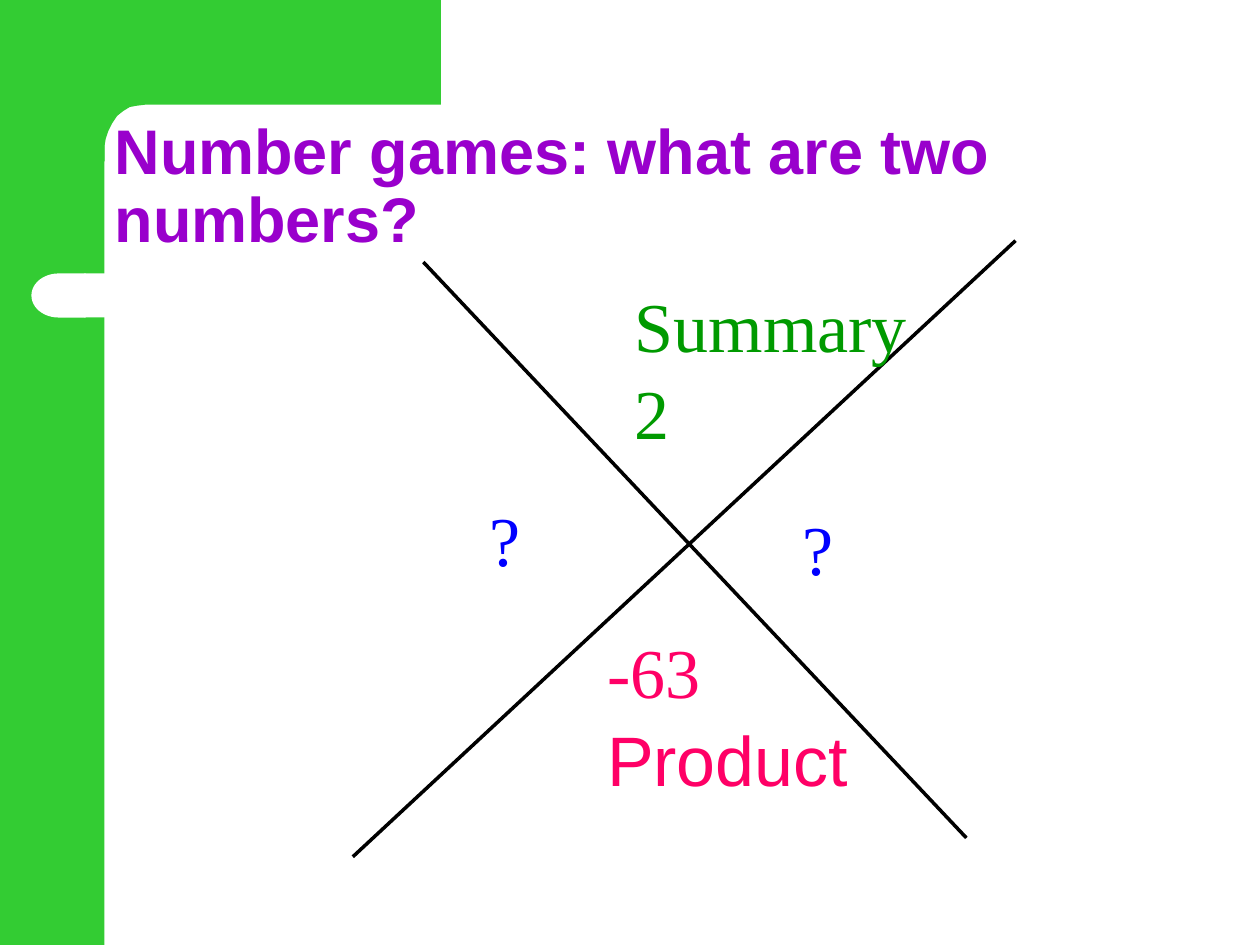
"""Build the "Number games" slide: a sum and product puzzle around a large cross."""
from lxml import etree
from pptx import Presentation
from pptx.dml.color import RGBColor
from pptx.enum.shapes import MSO_CONNECTOR, MSO_SHAPE
from pptx.enum.text import MSO_ANCHOR
from pptx.oxml.ns import qn
from pptx.util import Inches, Pt

RECT = MSO_SHAPE.RECTANGLE
DELAY = MSO_SHAPE.FLOWCHART_DELAY
STRAIGHT = MSO_CONNECTOR.STRAIGHT
TOP, BOTTOM = MSO_ANCHOR.TOP, MSO_ANCHOR.BOTTOM
SANS, SERIF = "Arial", "Times New Roman"

COLORS = {
    "band": "33CC33", "paper": "FFFFFF", "title": "9900CC", "cross": "000000",
    "sum": "009A00", "product": "FF0066", "unknown": "0000FF",
}
TITLE = "Number games: what are two numbers?"
TITLE_BOX = (0.83, 0.83, 9, 1.25)
CORNER = [
    (3.5, 0), (3.5, 0.83), (1.16, 0.83), (1.08, 0.84), (1.03, 0.85),
    (0.98, 0.88), (0.93, 0.92), (0.89, 0.98), (0.86, 1.04), (0.84, 1.1),
    (0.83, 1.16), (0.83, 1.28), (0.5, 1.28), (0.5, 0),
]
CROSS = [((3.36, 2.08), (7.67, 6.65)), ((8.06, 1.91), (2.8, 6.8))]
CLUES = [
    ("product", (4.72, 4.87, 4.16, 1.93), [("-63", SERIF), ("Product", SANS)], 0.1),
    ("sum", (4.94, 2.12, 4.32, 2.23), [("Summary", SERIF), ("2", SERIF)], 0.1),
    ("unknown", (3.79, 3.82, 0.85, 0.76), [("?", SERIF)], 0.1),
    ("unknown", (6.12, 3.89, 1.13, 0.69), [("?", SERIF)], 0.25),
]


def color(key):
    return RGBColor.from_string(COLORS[key])


def paint(shape, key):
    shape.shadow.inherit = False
    shape.fill.solid()
    shape.fill.fore_color.rgb = color(key)
    shape.line.fill.background()


def add_block(slide, kind, box, key):
    block = slide.shapes.add_shape(kind, *map(Inches, box))
    paint(block, key)
    return block


def add_text(slide, box, lines, key, size, anchor, left, top, bold=False):
    frame = slide.shapes.add_textbox(*map(Inches, box)).text_frame
    frame.word_wrap = True
    frame.vertical_anchor = anchor
    frame.margin_left, frame.margin_top = Inches(left), Inches(top)
    frame.text = "\n".join(words for words, _ in lines)
    for paragraph, (_, face) in zip(frame.paragraphs, lines):
        font = paragraph.runs[0].font
        font.name, font.size, font.bold = face, Pt(size), bold
        font.color.rgb = color(key)
    return frame


def add_background(slide):
    add_block(slide, RECT, (0, 0, 0.83, 7.5), "band")
    builder = slide.shapes.build_freeform(*map(Inches, CORNER[0]), scale=1.0)
    builder.add_line_segments([tuple(map(Inches, point)) for point in CORNER[1:]])
    paint(builder.convert_to_shape(), "band")
    add_block(slide, RECT, (0.67, 2.17, 7.67, 0.35), "paper")
    tab = add_block(slide, DELAY, (0.25, 2.17, 0.43, 0.35), "paper")
    tab.element.spPr.find(qn("a:xfrm")).set("flipH", "1")


def add_cross(slide):
    for start, end in CROSS:
        stroke = slide.shapes.add_connector(STRAIGHT, *map(Inches, start + end))
        stroke.line.color.rgb = color("cross")
        stroke.line.width = Pt(2)
        etree.SubElement(stroke.element.spPr, qn("a:effectLst"))


def main():
    deck = Presentation()
    deck.slide_width, deck.slide_height = Inches(10), Inches(7.5)
    slide = deck.slides.add_slide(deck.slide_layouts[6])
    add_background(slide)
    title = add_text(slide, TITLE_BOX, [(TITLE, SANS)], "title", 36, BOTTOM, 0.08, 0.05, True)
    title.paragraphs[0].line_spacing = 0.9
    add_cross(slide)
    for key, box, lines, left in CLUES:
        clue = add_text(slide, box, lines, key, 40, TOP, left, 0.12)
        for paragraph in clue.paragraphs[1:]:
            paragraph.space_before = Pt(2)
    deck.save("out.pptx")


if __name__ == "__main__":
    main()
